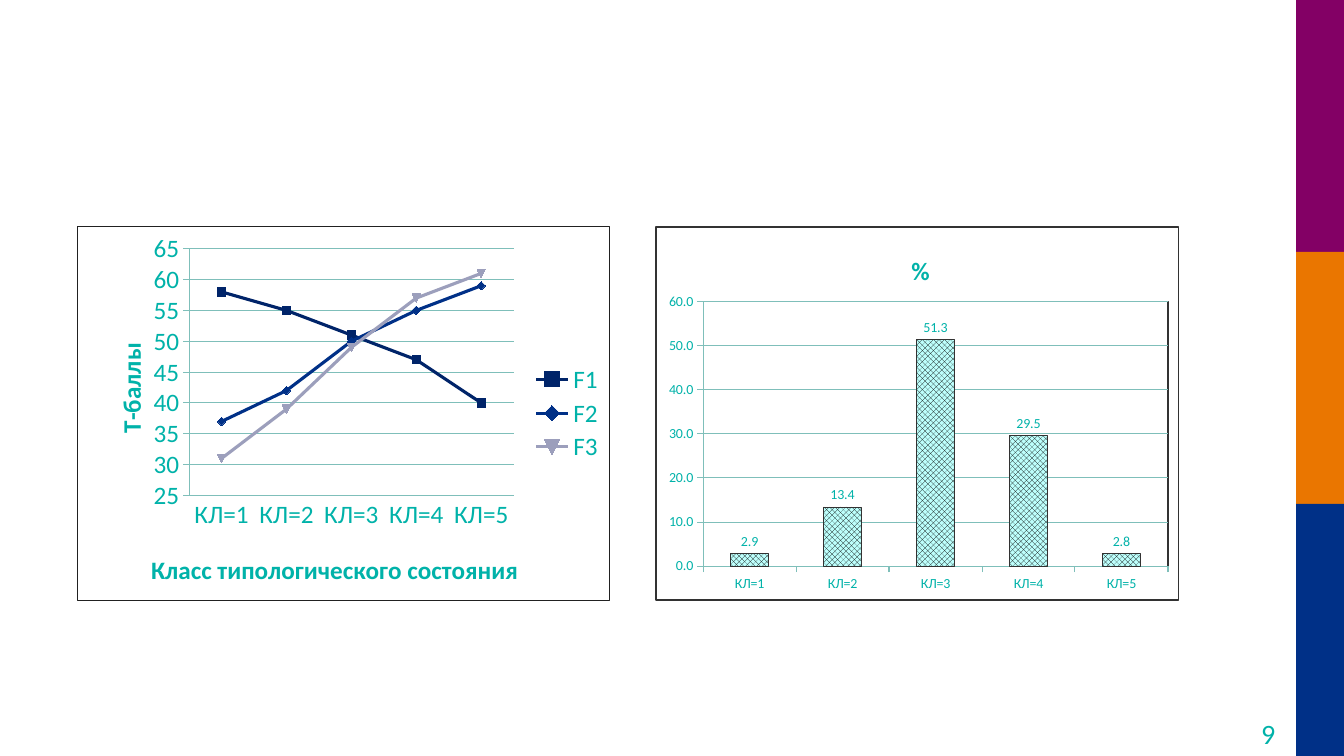
from dataclasses import dataclass

from lxml.etree import SubElement
from pptx import Presentation
from pptx.chart.data import CategoryChartData
from pptx.dml.color import RGBColor
from pptx.enum.chart import (XL_CHART_TYPE, XL_LABEL_POSITION, XL_LEGEND_POSITION,
                             XL_MARKER_STYLE, XL_TICK_MARK)
from pptx.enum.dml import MSO_PATTERN
from pptx.enum.shapes import MSO_SHAPE
from pptx.enum.text import MSO_ANCHOR, PP_ALIGN
from pptx.oxml import parse_xml
from pptx.oxml.ns import nsdecls, qn
from pptx.util import Inches, Pt

COLUMNS, ROWS = 28, 30
CLASSES = ["КЛ=1", "КЛ=2", "КЛ=3", "КЛ=4", "КЛ=5"]
SCORES = {"F1": [58, 55, 51, 47, 40],
          "F2": [37, 42, 50, 55, 59],
          "F3": [31, 39, 49, 57, 61]}
SHARES = {"%": [2.9, 13.4, 51.3, 29.5, 2.8]}


@dataclass(frozen=True)
class Theme:
    font: str = "Calibri"
    teal: str = "00B2A9"
    grid: str = "7FBFBA"
    frame: str = "212121"
    edge: str = "323232"
    hatch: str = "000000"
    hatch_back: str = "BDFFFC"
    stripes: tuple = ("830065", "EA7600", "003087")
    lines: tuple = ("002469", "003087", "9C9FBC")
    number_size: int = 20
    large: int = 18
    small: int = 10


def rgb(value):
    return RGBColor.from_string(value)


def style_font(font, theme, size, bold=False):
    font.name, font.size, font.bold = theme.font, Pt(size), bold
    font.color.rgb = rgb(theme.teal)


def write(frame, text, theme, size, bold=False, align=PP_ALIGN.CENTER):
    para = frame.paragraphs[0]
    para.alignment = align
    span = para.add_run()
    span.text = text
    style_font(span.font, theme, size, bold)


def style_line(line, color, width):
    line.color.rgb = rgb(color)
    line.width = Pt(width)


def place(element, index, inner=False, **shares):
    """Fix a chart part at x, y, w, h, given as shares of the chart."""
    for old in element.findall(qn("c:layout")):
        element.remove(old)
    layout = parse_xml(f"<c:layout {nsdecls('c')}/>")
    manual = SubElement(layout, qn("c:manualLayout"))
    if inner:
        SubElement(manual, qn("c:layoutTarget"), val="inner")
    for key in "xy":
        SubElement(manual, qn(f"c:{key}Mode"), val="edge")
    for key, share in shares.items():
        SubElement(manual, qn(f"c:{key}"), val=str(share))
    element.insert(index, layout)


def border(color, width):
    """Return unfilled chart properties with an outline."""
    return parse_xml(
        f'<c:spPr {nsdecls("c", "a")}><a:noFill/><a:ln w="{Pt(width)}"><a:solidFill>'
        f'<a:srgbClr val="{color}"/></a:solidFill></a:ln></c:spPr>')


class SlideBuilder:
    def __init__(self, deck, theme):
        self.theme = theme
        self.column = deck.slide_width / COLUMNS
        self.row = deck.slide_height / ROWS
        self.page = deck.slides.add_slide(deck.slide_layouts[6])

    def cell(self, left, top, width, height):
        return (round(left * self.column), round(top * self.row),
                round(width * self.column), round(height * self.row))

    def stripe(self, color, *area):
        box = self.page.shapes.add_shape(MSO_SHAPE.RECTANGLE, *self.cell(*area))
        box.shadow.inherit = False
        box.fill.solid()
        box.fill.fore_color.rgb = rgb(color)
        box.line.fill.background()

    def number(self, text, *area):
        frame = self.page.shapes.add_textbox(*self.cell(*area)).text_frame
        frame.word_wrap = True
        frame.vertical_anchor = MSO_ANCHOR.MIDDLE
        frame.margin_left = frame.margin_right = 0
        frame.margin_top = frame.margin_bottom = 0
        write(frame, text, self.theme, self.theme.number_size, align=PP_ALIGN.RIGHT)

    def chart(self, kind, values, area, size, plot, frame_color, frame_width):
        data = CategoryChartData()
        data.categories = CLASSES
        for name, numbers in values.items():
            data.add_series(name, numbers)
        chart = self.page.shapes.add_chart(kind, *self.cell(*area), data).chart
        chart.has_legend = chart.has_title = False
        style_font(chart.font, self.theme, size)
        chart.plots[0].vary_by_categories = False
        space = chart._chartSpace
        space.find(qn("c:chart")).addnext(border(frame_color, frame_width))
        place(space.chart.plotArea, 0, inner=True, **plot)
        return chart

    def axes(self, chart, low, high, step, number_format, category_tick):
        for axis in (chart.category_axis, chart.value_axis):
            style_line(axis.format.line, self.theme.grid, 0.75)
            axis.minor_tick_mark = XL_TICK_MARK.NONE
        chart.category_axis.major_tick_mark = category_tick
        axis = chart.value_axis
        axis.major_tick_mark = XL_TICK_MARK.OUTSIDE
        axis.minimum_scale, axis.maximum_scale, axis.major_unit = low, high, step
        axis.has_major_gridlines = True
        style_line(axis.major_gridlines.format.line, self.theme.grid, 0.75)
        axis.tick_labels.number_format = number_format
        axis.tick_labels.number_format_is_linked = False

    def title(self, title, text, x, y, upright=False):
        write(title.text_frame, text, self.theme, self.theme.large, bold=True)
        if upright:
            properties = title._element.find(".//" + qn("a:bodyPr"))
            properties.set("rot", "-5400000")
            properties.set("vert", "horz")
        place(title._element, 1, x=x, y=y)

    def score_chart(self, *area):
        theme = self.theme
        chart = self.chart(XL_CHART_TYPE.LINE_MARKERS, SCORES, area, theme.large,
                           dict(x=0.21, y=0.06, w=0.61, h=0.66), theme.frame, 0.75)
        self.axes(chart, 25, 65, 5, "0", XL_TICK_MARK.NONE)
        self.title(chart.category_axis.axis_title, "Класс типологического состояния",
                   0.13, 0.86)
        self.title(chart.value_axis.axis_title, "Т-баллы", 0.06, 0.3, upright=True)
        chart.has_legend = True
        chart.legend.position = XL_LEGEND_POSITION.RIGHT
        chart.legend.include_in_layout = False
        place(chart.legend._element, 1, x=0.85, y=0.36, w=0.14, h=0.28)
        for series, color in zip(chart.plots[0].series, theme.lines):
            series.smooth = False
            style_line(series.format.line, color, 2.25)
            series.marker.style = XL_MARKER_STYLE.AUTOMATIC
            series.marker.size = 6
            series.marker.format.fill.solid()
            series.marker.format.fill.fore_color.rgb = rgb(color)
            style_line(series.marker.format.line, color, 0.75)

    def share_chart(self, *area):
        theme = self.theme
        chart = self.chart(XL_CHART_TYPE.COLUMN_CLUSTERED, SHARES, area, theme.small,
                           dict(x=0.09, y=0.2, w=0.89, h=0.71), theme.edge, 1.25)
        self.axes(chart, 0, 60, 10, "0.0", XL_TICK_MARK.OUTSIDE)
        chart.has_title = True
        self.title(chart.chart_title, "%", 0.48, 0.06)
        chart._chartSpace.chart.plotArea.append(border(theme.edge, 0.75))
        plot = chart.plots[0]
        plot.gap_width = 150
        series = plot.series[0]
        fill = series.format.fill
        fill.patterned()
        fill.pattern = MSO_PATTERN.LARGE_CHECKER_BOARD
        fill.fore_color.rgb = rgb(theme.hatch)
        fill.back_color.rgb = rgb(theme.hatch_back)
        style_line(series.format.line, theme.edge, 0.75)
        labels = series.data_labels
        labels.show_value = True
        labels.number_format, labels.number_format_is_linked = "0.0", False
        labels.position = XL_LABEL_POSITION.OUTSIDE_END
        style_font(labels.font, theme, theme.small)


def main():
    deck = Presentation()
    deck.slide_width, deck.slide_height = Inches(13.33), Inches(7.5)
    theme = Theme()
    builder = SlideBuilder(deck, theme)
    stripe_rows = ROWS / len(theme.stripes)
    for index, color in enumerate(theme.stripes):
        builder.stripe(color, COLUMNS - 1, index * stripe_rows, 1, stripe_rows)
    builder.number("9", 25.33, 28.56, 1.24, 1.08)
    builder.score_chart(1.6, 8.96, 11.11, 14.88)
    builder.share_chart(13.65, 8.96, 10.92, 14.88)
    deck.save("out.pptx")


if __name__ == "__main__":
    main()
